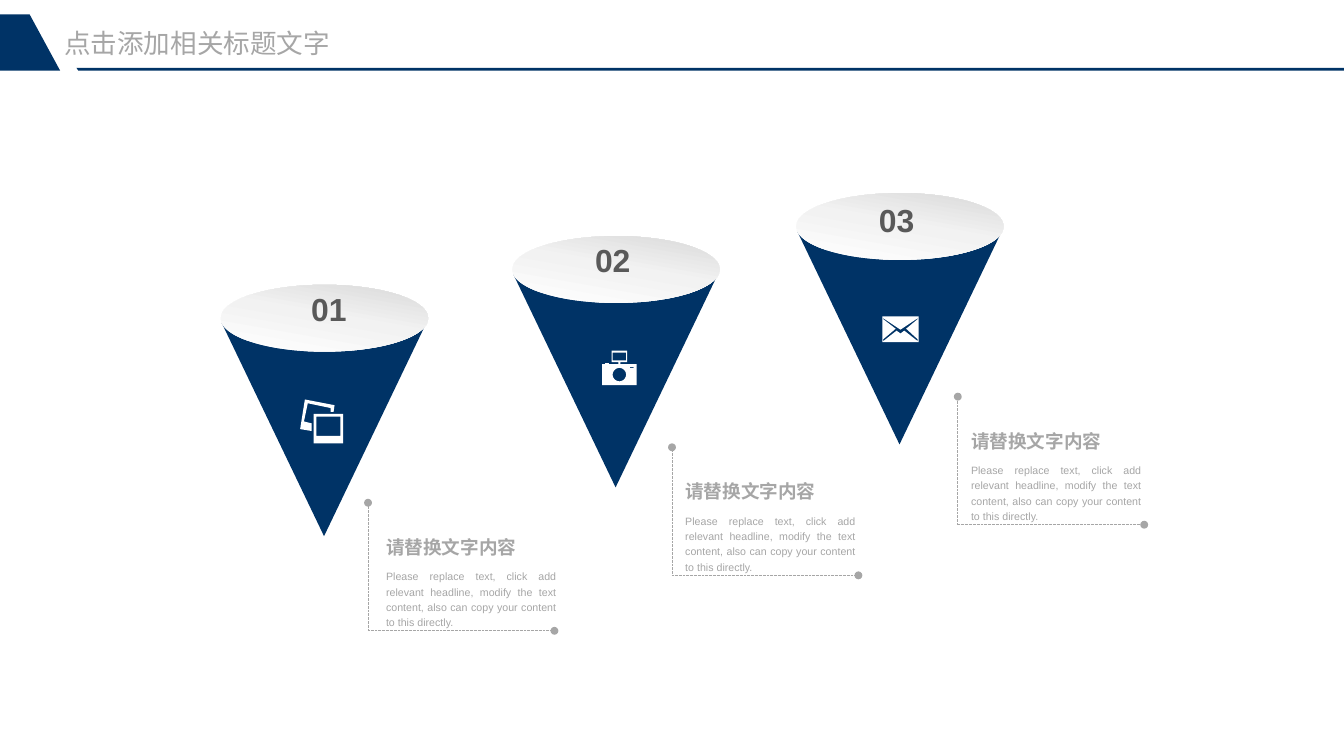
from copy import deepcopy
from math import cos, pi, sin

from pptx import Presentation
from pptx.dml.color import RGBColor
from pptx.enum.dml import MSO_LINE
from pptx.enum.shapes import MSO_CONNECTOR, MSO_SHAPE
from pptx.enum.text import MSO_ANCHOR, MSO_AUTO_SIZE, PP_ALIGN
from pptx.oxml.ns import qn
from pptx.util import Inches, Pt
from lxml.etree import SubElement

COLORS = {name: RGBColor.from_string(value) for name, value in {
    "navy": "003366", "white": "FFFFFF", "light": "F2F2F2",
    "silver": "D9D9D9", "gray": "A6A6A6", "dark": "595959"}.items()}
HEADING = "请替换文字内容"
BODY = ("Please replace text, click add relevant headline, modify the text "
        "content, also can copy your content to this directly.")

presentation = Presentation()
presentation.slide_width = Inches(14.06)
presentation.slide_height = Inches(7.91)
slide = presentation.slides.add_slide(presentation.slide_layouts[5])


def add_outline(contours, color):
    """Draw closed contours as one shape; inner contours become holes."""
    builder = None
    for contour in contours:
        points = [(Inches(x), Inches(y)) for x, y in contour]
        if builder is None:
            builder = slide.shapes.build_freeform(*points[0])
        else:
            builder.move_to(*points[0])
        builder.add_line_segments(points[1:], close=True)
    shape = builder.convert_to_shape()
    shape.shadow.inherit = False
    shape.fill.solid()
    shape.fill.fore_color.rgb = COLORS[color]
    shape.line.fill.background()


def add_text(text, left, top, width, height, size, color, bold, align, wrap=True):
    frame = slide.shapes.add_textbox(
        Inches(left), Inches(top), Inches(width), Inches(height)).text_frame
    frame.word_wrap = wrap
    paragraph = frame.paragraphs[0]
    paragraph.text = text
    paragraph.alignment = align
    paragraph.line_spacing = 1.2
    paragraph.font.name = "Arial"
    paragraph.font.size = Pt(size)
    paragraph.font.bold = bold
    paragraph.font.color.rgb = COLORS[color]


# Header: title, corner tab and rule
title = slide.shapes.title
title.left, title.top = Inches(0.67), Inches(0.28)
title.width, title.height = Inches(3.35), Inches(0.34)
frame = title.text_frame
frame.margin_left = frame.margin_right = frame.margin_top = frame.margin_bottom = 0
frame.auto_size = MSO_AUTO_SIZE.NONE
frame.vertical_anchor = MSO_ANCHOR.MIDDLE
paragraph = frame.paragraphs[0]
paragraph.text = "点击添加相关标题文字"
paragraph.alignment = PP_ALIGN.LEFT
paragraph.font.name = "Arial"
paragraph.font.size = Pt(20)
paragraph.font.color.rgb = COLORS["gray"]
add_outline([[(0.8, 0.71), (14.06, 0.71), (14.06, 0.74), (0.82, 0.74)]], "navy")
add_outline([[(0, 0.15), (0.31, 0.15), (0.63, 0.74), (0, 0.74)]], "navy")

# Cones with numbers and callouts:
# cone centre, cone top, number top, callout corner, text left
steps = [
    (3.39, 2.98, 2.90, (3.85, 6.60), 3.94),
    (6.44, 2.47, 2.39, (7.03, 6.02), 7.07),
    (9.41, 2.02, 1.97, (10.02, 5.49), 10.06),
]
for index, (center, top, number_top, corner, text_left) in enumerate(steps):
    add_outline([[(center - 1, top + 0.39), (center + 1, top + 0.39),
                  (center + 1.07, top + 0.4), (center, top + 2.63),
                  (center - 1.07, top + 0.4)]], "navy")

    lid = slide.shapes.add_shape(MSO_SHAPE.OVAL, Inches(center - 1.08), Inches(top),
                                 Inches(2.17), Inches(0.7))
    lid.shadow.inherit = False
    lid.line.fill.background()
    lid.fill.gradient()
    lid.fill.gradient_angle = 80
    stop_list = lid._element.spPr.find(".//" + qn("a:gsLst"))
    stop_list.append(deepcopy(stop_list[-1]))
    lid_stops = [(0, "white"), (0.53, "light"), (1, "silver")]
    for stop, (position, color) in zip(lid.fill.gradient_stops, lid_stops):
        stop.position = position
        stop.color.rgb = COLORS[color]

    add_text(f"{index + 1:02}", 3.15 + 2.97 * index, number_top, 0.58, 0.54,
             24, "dark", True, PP_ALIGN.CENTER, wrap=False)

    corner_x, corner_y = corner
    for end_x, end_y in [(corner_x + 1.95, corner_y), (corner_x, corner_y - 1.34)]:
        connector = slide.shapes.add_connector(
            MSO_CONNECTOR.STRAIGHT, Inches(corner_x), Inches(corner_y),
            Inches(end_x), Inches(end_y))
        connector.line.color.rgb = COLORS["gray"]
        connector.line.width = Pt(0.5)
        connector.line.dash_style = MSO_LINE.ROUND_DOT
        properties = connector._element.spPr
        SubElement(properties.find(qn("a:ln")), qn("a:tailEnd"), type="oval")
        SubElement(properties, qn("a:effectLst"))
    add_text(HEADING, text_left, corner_y - 1.09, 1.68, 0.36,
             14, "gray", True, PP_ALIGN.LEFT)
    add_text(BODY, text_left, corner_y - 0.71, 1.98, 0.73,
             8, "gray", False, PP_ALIGN.JUSTIFY)

# Photos icon
add_outline([
    [(3.28, 4.33), (3.59, 4.33), (3.59, 4.64), (3.28, 4.64)],
    [(3.31, 4.36), (3.56, 4.36), (3.56, 4.56), (3.31, 4.56)],
], "white")
add_outline([[(3.19, 4.18), (3.5, 4.24), (3.49, 4.31), (3.46, 4.31), (3.46, 4.27),
              (3.22, 4.22), (3.18, 4.41), (3.26, 4.43), (3.26, 4.51),
              (3.14, 4.49)]], "white")

# Camera icon
lens = [(6.48 + 0.07 * cos(step * pi / 18), 3.92 + 0.07 * sin(step * pi / 18))
        for step in range(36)]
add_outline([
    [(6.49, 3.81), (6.49, 3.79), (6.56, 3.79), (6.56, 3.67), (6.4, 3.67),
     (6.4, 3.79), (6.47, 3.79), (6.47, 3.81), (6.37, 3.81), (6.37, 3.8),
     (6.33, 3.8), (6.33, 3.81), (6.3, 3.81), (6.3, 4.03), (6.66, 4.03),
     (6.66, 3.81)],
    [(6.41, 3.69), (6.55, 3.69), (6.55, 3.77), (6.41, 3.77)],
    lens,
    [(6.59, 3.84), (6.63, 3.84), (6.63, 3.85), (6.59, 3.85)],
], "white")

# Envelope icon
add_outline([
    [(9.23, 3.31), (9.61, 3.31), (9.61, 3.58), (9.23, 3.58)],
    [(9.6, 3.34), (9.48, 3.44), (9.6, 3.55), (9.6, 3.57), (9.46, 3.46),
     (9.42, 3.49), (9.38, 3.46), (9.24, 3.57), (9.24, 3.55), (9.37, 3.44),
     (9.24, 3.34), (9.24, 3.33), (9.42, 3.45), (9.6, 3.33)],
], "white")

presentation.save("out.pptx")
